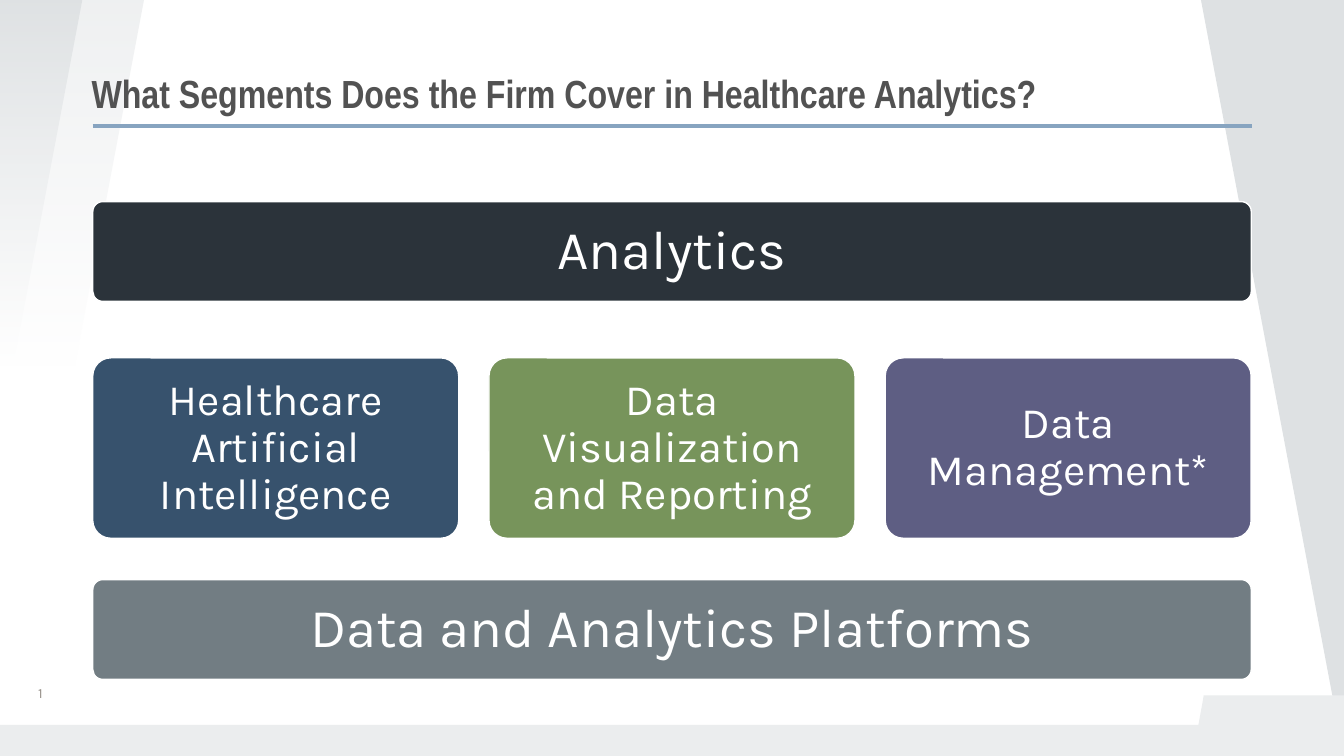
import pptx
import pptx.util
import pptx.dml.color
import pptx.enum.shapes
import pptx.enum.text
import lxml.etree

Inches = pptx.util.Inches
Pt = pptx.util.Pt
Kind = pptx.enum.shapes.MSO_SHAPE
Anchor = pptx.enum.text.MSO_ANCHOR
Align = pptx.enum.text.PP_ALIGN
NS = "http://schemas.openxmlformats.org/drawingml/2006/main"


def tint(code):
    return pptx.dml.color.RGBColor.from_string(code)


def write(shape, text, anchor, align, inset, color, form):
    frame = shape.text_frame
    frame.word_wrap = True
    frame.vertical_anchor = anchor
    for side in ("left", "right", "top", "bottom"):
        setattr(frame, "margin_" + side, Inches(inset))
    para = frame.paragraphs[0]
    para.text = text
    para.alignment = align
    para.line_spacing = 0.9
    para.font.color.rgb = tint(color)
    for key, value in form.items():
        setattr(para.font, key, value)


deck = pptx.Presentation()
deck.slide_width = Inches(13.33)
deck.slide_height = Inches(7.5)
slide = deck.slides.add_slide(deck.slide_layouts[6])
shapes = slide.shapes

# Slanted sides, fading veil and foot
decor = [
    (Kind.RIGHT_TRIANGLE, 0.01, -0.01, 1.42, 7.52, "DEE1E3", "V"),
    (Kind.RIGHT_TRIANGLE, -0.6, -0.02, 1.42, 7.52, "BDC3C7", "V"),
    (Kind.RECTANGLE, 0, -0.03, 1.74, 7.39, None, ""),
    (Kind.RIGHT_TRIANGLE, 11.91, -0.01, 1.42, 7.52, "DEE1E3", "HV"),
    (Kind.RIGHT_TRIANGLE, 11.83, 6.9, 0.11, 0.6, "EBEDEE", "H"),
    (Kind.RECTANGLE, 11.94, 6.9, 1.39, 0.6, "EBEDEE", ""),
    (Kind.RECTANGLE, 0, 7.19, 13.33, 0.31, "EBEDEE", ""),
]
for kind, left, top, width, height, color, flips in decor:
    part = shapes.add_shape(kind, Inches(left), Inches(top), Inches(width), Inches(height))
    part.shadow.inherit = False
    part.line.fill.background()
    for axis in flips:
        part._element.spPr.xfrm.set("flip" + axis, "1")
    if color:
        part.fill.solid()
        part.fill.fore_color.rgb = tint(color)
    else:
        fade = lxml.etree.fromstring(
            f'<a:gradFill xmlns:a="{NS}" rotWithShape="1"><a:gsLst>'
            '<a:gs pos="0"><a:srgbClr val="FFFFFF"><a:alpha val="50000"/></a:srgbClr></a:gs>'
            '<a:gs pos="50000"><a:srgbClr val="FFFFFF"/></a:gs>'
            '<a:gs pos="100000"><a:srgbClr val="FFFFFF"/></a:gs>'
            '</a:gsLst><a:lin ang="5400000" scaled="0"/></a:gradFill>')
        part._element.spPr.find(f"{{{NS}}}prstGeom").addnext(fade)

# Title rule
rule = shapes.add_connector(pptx.enum.shapes.MSO_CONNECTOR.STRAIGHT,
                            Inches(0.92), Inches(1.25), Inches(12.42), Inches(1.25))
rule.line.color.rgb = tint("87A4C0")
rule.line.width = Pt(3)
lxml.etree.SubElement(rule._element.spPr, f"{{{NS}}}effectLst")

# Title and page number
title = shapes.add_textbox(Inches(0.81), Inches(0.66), Inches(11.6), Inches(0.59))
write(title, "What Segments Does the Firm Cover in Healthcare Analytics?", Anchor.MIDDLE,
      Align.LEFT, 0.1, "525252", {"name": "Arial Narrow", "size": Pt(28), "bold": True})
page = shapes.add_textbox(Inches(0.28), Inches(6.64), Inches(3), Inches(0.4))
write(page, "1", Anchor.BOTTOM, Align.LEFT, 0.1, "948D86",
      {"name": "Karla", "size": Pt(10)})

# Segment blocks: wide bars above and below a row of three cards
edge, full, card = 0.92, 11.49, 3.63
step = (full - card) / 2
blocks = [("Analytics", edge, 2, full, 0.99, "2B333A", 39, 0.16)]
cards = [
    ("Healthcare Artificial Intelligence", "37526D"),
    ("Data Visualization and Reporting", "77945B"),
    ("Data Management*", "5E5E83"),
]
for i, (text, color) in enumerate(cards):
    blocks.append((text, edge + i * step, 3.55, card, 1.79, color, 31, 0.13))
blocks.append(("Data and Analytics Platforms", edge, 5.75, full, 0.99, "727D83", 39, 0.16))

for text, left, top, width, height, color, size, inset in blocks:
    block = shapes.add_shape(Kind.ROUNDED_RECTANGLE, Inches(left), Inches(top),
                             Inches(width), Inches(height))
    block.shadow.inherit = False
    block.adjustments[0] = 0.1
    block.fill.solid()
    block.fill.fore_color.rgb = tint(color)
    block.line.color.rgb = tint("FFFFFF")
    block.line.width = Pt(1)
    write(block, text, Anchor.MIDDLE, Align.CENTER, inset, "FFFFFF",
          {"name": "Karla", "size": Pt(size)})

deck.save("out.pptx")
